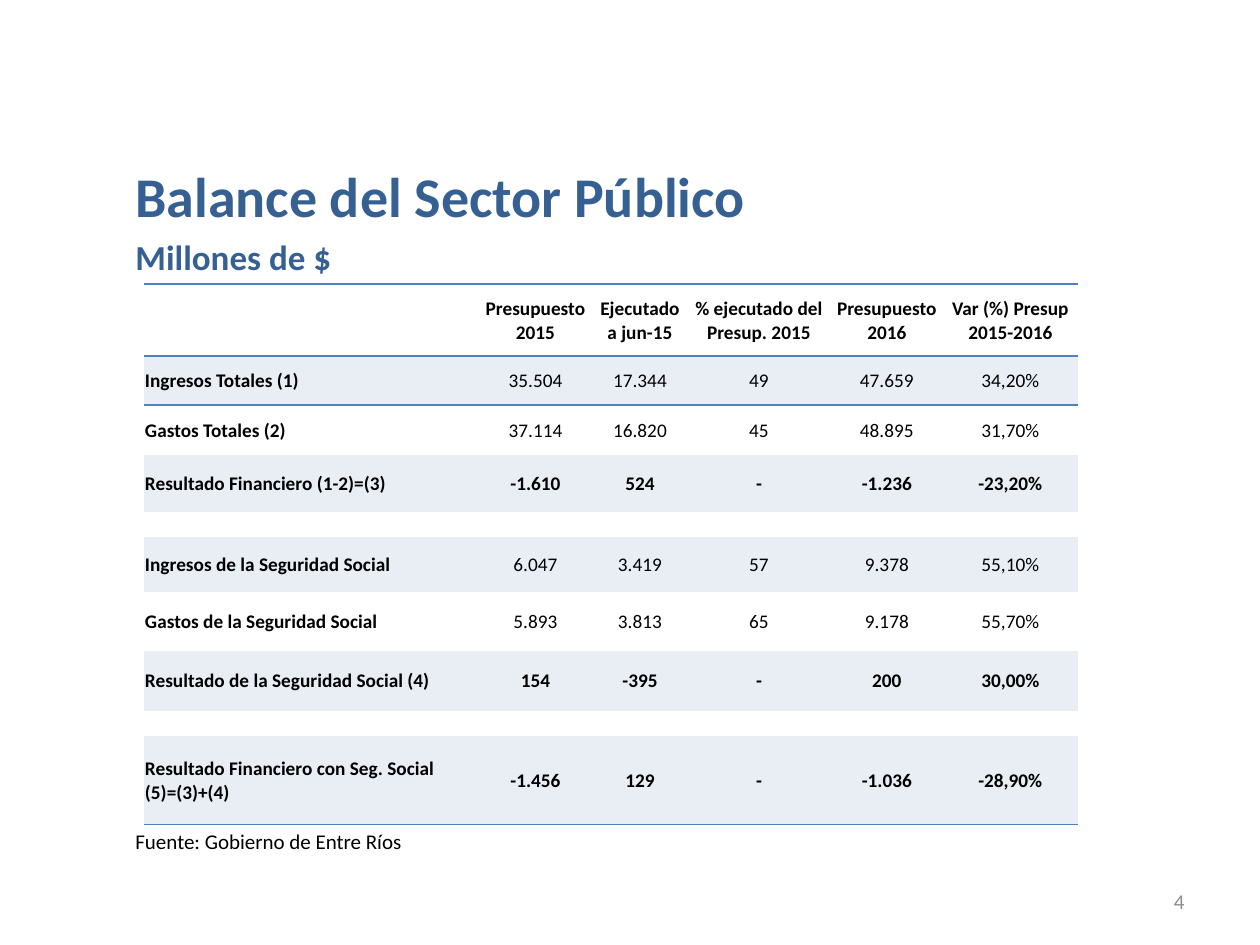
from lxml.etree import SubElement
from pptx import Presentation
from pptx.dml.color import RGBColor
from pptx.enum.text import MSO_ANCHOR, MSO_AUTO_SIZE, PP_ALIGN
from pptx.oxml.ns import qn
from pptx.util import Pt

NAVY = RGBColor(0x37, 0x60, 0x92)
BLUE = RGBColor(0x4F, 0x81, 0xBD)
PALE = RGBColor(0xE9, 0xED, 0xF4)
GRAY = RGBColor(0x8C, 0x8C, 0x8C)
BLACK = RGBColor(0, 0, 0)
PLAIN = "{2D5ABB26-0587-4C30-8999-92F81FD0307C}"

TEXTS = [
    ("4", (903, 876, 294, 50), 12, GRAY, False, PP_ALIGN.RIGHT, MSO_ANCHOR.MIDDLE, MSO_AUTO_SIZE.NONE),
    ("Balance del Sector Público", (123, 155, 814, 81), 32, NAVY, True,
     PP_ALIGN.LEFT, MSO_ANCHOR.TOP, MSO_AUTO_SIZE.SHAPE_TO_FIT_TEXT),
    ("Millones de $", (123, 229, 814, 55), 20, NAVY, True,
     PP_ALIGN.LEFT, MSO_ANCHOR.TOP, MSO_AUTO_SIZE.SHAPE_TO_FIT_TEXT),
    ("Fuente: Gobierno de Entre Ríos", (123, 822, 769, 38), 12, BLACK, False,
     PP_ALIGN.LEFT, MSO_ANCHOR.TOP, MSO_AUTO_SIZE.SHAPE_TO_FIT_TEXT),
]
GAP = [""] * 6
ROWS = [
    ["", "Presupuesto 2015", "Ejecutado a jun-15", "% ejecutado del Presup. 2015",
     "Presupuesto 2016", "Var (%) Presup 2015-2016"],
    ["Ingresos Totales (1)", "35.504", "17.344", "49", "47.659", "34,20%"],
    ["Gastos Totales (2)", "37.114", "16.820", "45", "48.895", "31,70%"],
    ["Resultado Financiero (1-2)=(3)", "-1.610", "524", "-", "-1.236", "-23,20%"],
    GAP,
    ["Ingresos de la Seguridad Social", "6.047", "3.419", "57", "9.378", "55,10%"],
    ["Gastos de la Seguridad Social", "5.893", "3.813", "65", "9.178", "55,70%"],
    ["Resultado de la Seguridad Social (4)", "154", "-395", "-", "200", "30,00%"],
    GAP,
    ["Resultado Financiero con Seg. Social (5)=(3)+(4)", "-1.456", "129", "-", "-1.036", "-28,90%"],
]
WIDTHS = [334, 115, 94, 144, 112, 135]
HEIGHTS = [72, 49, 50, 57, 25, 55, 59, 60, 25, 89]
EDGES = {0: ("lnT", "lnB"), 1: ("lnT",), len(ROWS) - 1: ("lnB",)}


def px(n):
    return round(n * 914400 / 126)


def put(item, **values):
    for name, value in values.items():
        setattr(item, name, value)


def write(par, text, size, color, bold, align):
    par.alignment = align
    if text:
        run = par.add_run()
        run.text = text
        put(run.font, name="Calibri", size=Pt(size), bold=bold)
        run.font.color.rgb = color
    else:
        SubElement(par._p, qn("a:endParaRPr"), sz=str(size * 100))


def edge(cell, side):
    line = SubElement(cell._tc.get_or_add_tcPr(), qn("a:" + side), w=str(Pt(1)))
    fill = SubElement(line, qn("a:solidFill"))
    SubElement(fill, qn("a:srgbClr"), val=str(BLUE))


def add_text(slide, text, place, size, color, bold, align, anchor, auto):
    frame = slide.shapes.add_textbox(*map(px, place)).text_frame
    put(frame, word_wrap=True, auto_size=auto, vertical_anchor=anchor)
    write(frame.paragraphs[0], text, size, color, bold, align)


def add_grid(slide):
    place = (144, 284, sum(WIDTHS), sum(HEIGHTS))
    grid = slide.shapes.add_table(len(ROWS), len(WIDTHS), *map(px, place)).table
    put(grid, first_row=False, horz_banding=False)
    grid._tbl.tblPr.find(qn("a:tableStyleId")).text = PLAIN
    for col, width in zip(grid.columns, WIDTHS):
        col.width = px(width)
    for r, (row, height) in enumerate(zip(ROWS, HEIGHTS)):
        grid.rows[r].height = px(height)
        total = r == 0 or row[0].startswith("Resultado")
        for c, text in enumerate(row):
            cell = grid.cell(r, c)
            put(cell, vertical_anchor=MSO_ANCHOR.MIDDLE, margin_left=px(1),
                margin_right=px(1), margin_top=px(1), margin_bottom=0)
            for side in EDGES.get(r, ()):
                edge(cell, side)
            if r % 2:
                cell.fill.solid()
                cell.fill.fore_color.rgb = PALE
            else:
                cell.fill.background()
            align = PP_ALIGN.CENTER if c else PP_ALIGN.LEFT
            write(cell.text_frame.paragraphs[0], text, 11, BLACK, total or c == 0, align)


def main():
    deck = Presentation()
    put(deck, slide_width=px(1260), slide_height=px(945))
    slide = deck.slides.add_slide(deck.slide_layouts[6])
    for item in TEXTS:
        add_text(slide, *item)
    add_grid(slide)
    deck.save("out.pptx")


if __name__ == "__main__":
    main()
